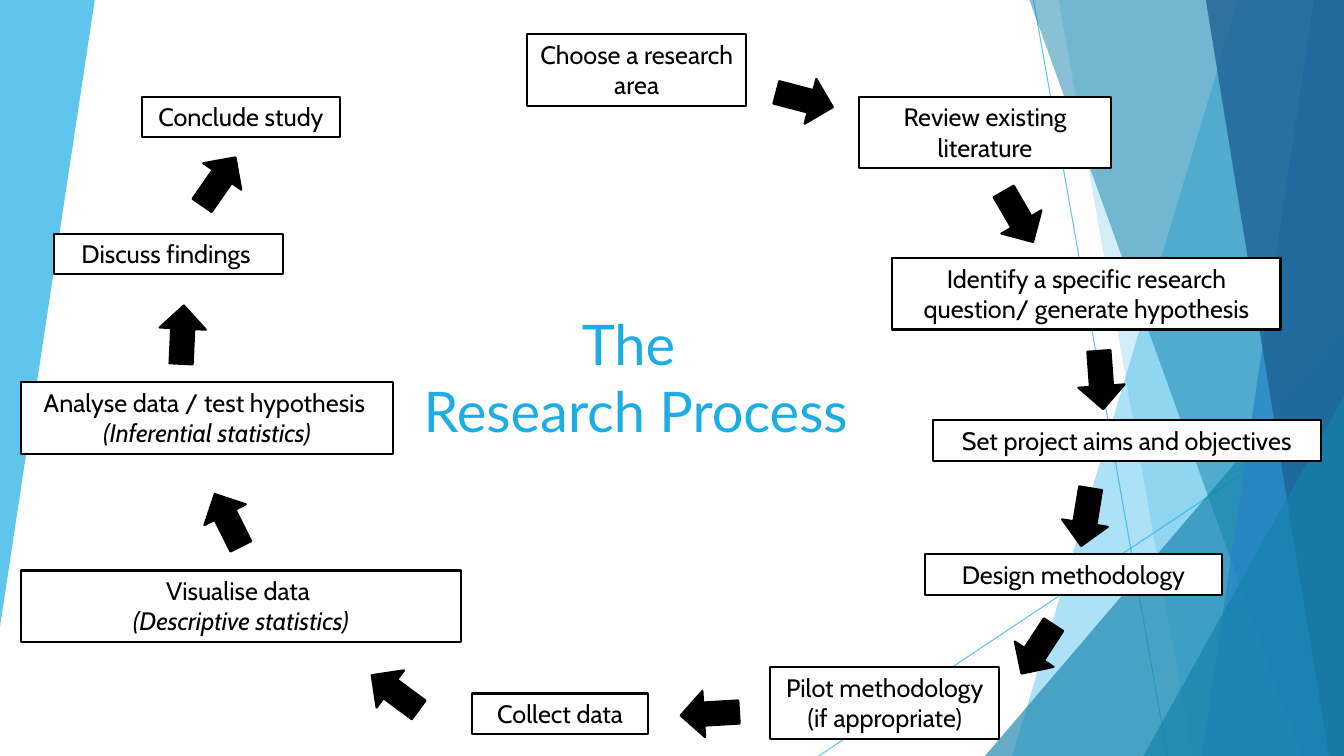
from lxml.etree import SubElement
from pptx import Presentation
from pptx.dml.color import RGBColor
from pptx.enum.shapes import MSO_CONNECTOR as Connector, MSO_SHAPE as Preset
from pptx.enum.text import MSO_AUTO_SIZE as AutoSize, PP_ALIGN as Align
from pptx.oxml.ns import qn
from pptx.util import Inches, Pt

BLACK = RGBColor(0x00, 0x00, 0x00)
WHITE = RGBColor(0xFF, 0xFF, 0xFF)
SKY = RGBColor(0x1C, 0xAD, 0xE4)
TEAL = RGBColor(0x14, 0x82, 0xAC)
BLUE = RGBColor(0x26, 0x83, 0xC6)
NAVY = RGBColor(0x1D, 0x62, 0x94)

COLUMNS, ROWS = 13.33, 7.5  # grid units across and down the slide


class ProcessSlide:
    body_font, title_font = "Cabin", "Lato"
    body_size, title_size = Pt(18), Pt(40)
    outline = Pt(1.5)
    box_heights = {1: 0.4, 2: 0.71}
    arrow_size = (0.58, 0.46)

    def __init__(self, presentation):
        self.column = presentation.slide_width / COLUMNS
        self.row = presentation.slide_height / ROWS
        self.slide = presentation.slides.add_slide(presentation.slide_layouts[6])
        self.shapes = self.slide.shapes

    def place(self, x, y):
        return round(x * self.column), round(y * self.row)

    def set_opacity(self, element, percent):
        color = next(element.iter(qn("a:srgbClr")))
        SubElement(color, qn("a:alpha")).set("val", str(percent * 1000))

    def tint(self, shape, color, opacity):
        shape.shadow.inherit = False
        shape.fill.solid()
        shape.fill.fore_color.rgb = color
        shape.line.fill.background()
        self.set_opacity(shape.fill._xPr, opacity)

    def facet(self, points, color, opacity):
        corners = [self.place(*point) for point in points]
        builder = self.shapes.build_freeform(*corners[0], scale=1.0)
        builder.add_line_segments(corners[1:], close=True)
        self.tint(builder.convert_to_shape(), color, opacity)

    def corner_triangle(self, left, top, color, opacity):
        shape = self.shapes.add_shape(
            Preset.ISOSCELES_TRIANGLE, *self.place(left, top),
            *self.place(COLUMNS - left, ROWS - top))
        shape.adjustments[0] = 1
        self.tint(shape, color, opacity)

    def hairline(self, start, end):
        line = self.shapes.add_connector(
            Connector.STRAIGHT, *self.place(*start), *self.place(*end))
        line.line.width = Pt(0.75)
        line.line.color.rgb = SKY
        properties = line._element.spPr
        self.set_opacity(properties, 70)
        SubElement(properties, qn("a:effectLst"))

    def text(self, left, top, width, height, lines, font, size, color):
        box = self.shapes.add_textbox(
            *self.place(left, top), *self.place(width, height))
        frame = box.text_frame
        frame.word_wrap = True
        frame.auto_size = AutoSize.SHAPE_TO_FIT_TEXT
        for index, line in enumerate(lines):
            paragraph = frame.add_paragraph() if index else frame.paragraphs[0]
            paragraph.alignment = Align.CENTER
            run = paragraph.add_run()
            run.text = line
            run.font.name, run.font.size = font, size
            run.font.color.rgb = color
            if line.endswith("statistics)"):
                run.font.italic = True
        return box

    def paint(self, shape, fill):
        shape.fill.solid()
        shape.fill.fore_color.rgb = fill
        shape.line.color.rgb = BLACK
        shape.line.width = self.outline

    def step(self, left, top, width, rows, *lines):
        box = self.text(left, top, width, self.box_heights[rows], lines,
                        self.body_font, self.body_size, BLACK)
        self.paint(box, WHITE)

    def arrow(self, left, top, angle):
        shape = self.shapes.add_shape(
            Preset.RIGHT_ARROW, *self.place(left, top), *self.place(*self.arrow_size))
        shape.shadow.inherit = False
        shape.rotation = angle
        self.paint(shape, BLACK)

    def title(self, left, top, width, height, *lines):
        self.text(left, top, width, height, lines,
                  self.title_font, self.title_size, SKY)


STEPS = [  # left, top, width, rows of text, paragraphs
    (5.23, 0.34, 2.17, 2, "Choose a research area"),
    (8.52, 0.96, 2.5, 2, "Review existing literature"),
    (8.85, 2.56, 3.85, 2, "Identify a specific research question/ generate hypothesis"),
    (9.25, 4.17, 3.85, 1, "Set project aims and objectives"),
    (9.17, 5.5, 2.95, 1, "Design methodology"),
    (7.64, 6.62, 2.27, 2, "Pilot methodology (if appropriate)"),
    (4.68, 6.88, 1.75, 1, "Collect data"),
    (0.21, 5.66, 4.36, 2, "Visualise data ", "(Descriptive statistics)"),
    (0.21, 3.79, 3.69, 2, "Analyse data / test hypothesis ", "(Inferential statistics)"),
    (0.54, 2.32, 2.27, 1, "Discuss findings "),
    (1.41, 0.96, 1.96, 1, "Conclude study"),
]
ARROWS = [  # left, top, clockwise angle
    (7.69, 0.76, 14.7), (9.81, 1.92, 59.9), (10.63, 3.54, 85.8),
    (10.48, 4.9, 99.3), (10, 6.21, 123.2), (6.75, 6.85, 176.6),
    (3.63, 6.64, 216.5), (1.97, 4.93, 243.5), (1.52, 3.09, 272.7),
    (1.88, 1.57, 304.8),
]


def right_band(top, bottom):
    """Corners of a band from a slanted edge to the right side of the slide."""
    return [(top, 0), (COLUMNS, 0), (COLUMNS, ROWS), (bottom, ROWS)]


def main():
    presentation = Presentation()
    presentation.slide_width = Inches(COLUMNS)
    presentation.slide_height = Inches(ROWS)
    page = ProcessSlide(presentation)

    # Faceted background
    page.facet([(0, 0), (0.94, 0), (0, 6.22)], SKY, 70)
    page.hairline((10.25, 0), (11.58, ROWS))
    page.hairline((COLUMNS, 4.03), (8.12, ROWS))
    page.facet(right_band(12.28, 10.04), SKY, 36)
    page.facet(right_band(10.5, 11.83), SKY, 20)
    page.corner_triangle(9.77, 3.33, TEAL, 66)
    page.facet(right_band(10.21, 12.91), TEAL, 50)
    page.facet(right_band(13.03, 11.92), BLUE, 70)
    page.facet(right_band(11.96, 13.18), NAVY, 80)
    page.corner_triangle(11.34, 3.93, TEAL, 66)

    # Cycle of steps and the arrows between them
    for step in STEPS:
        page.step(*step)
    for arrow in ARROWS:
        page.arrow(*arrow)

    # Title in the middle of the cycle
    page.title(3.91, 3.02, 4.79, 1.45, "The ", "Research Process")

    presentation.save("out.pptx")


if __name__ == "__main__":
    main()
